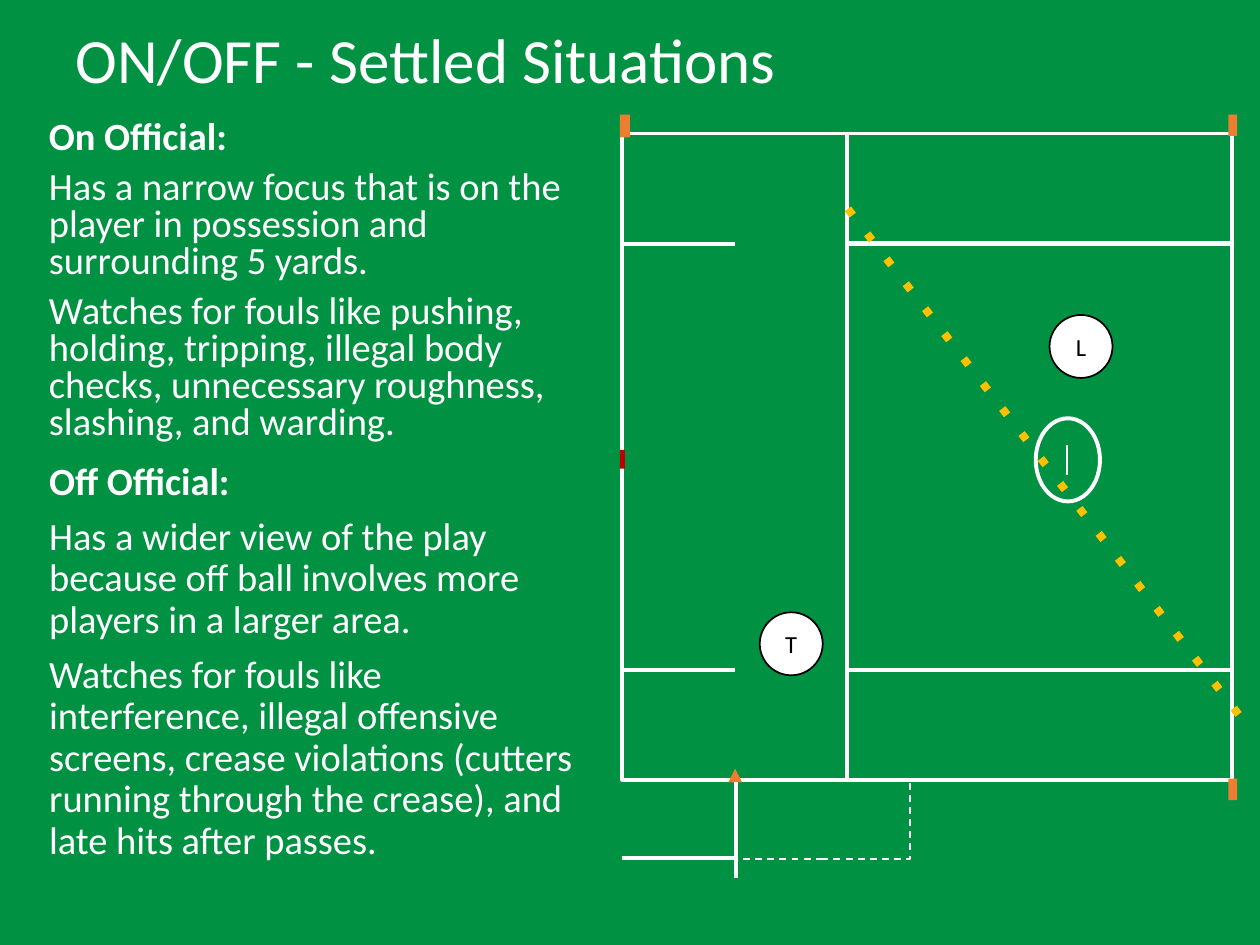
from collections import namedtuple

from lxml.etree import SubElement
from pptx import Presentation
from pptx.dml.color import RGBColor
from pptx.enum.shapes import MSO_CONNECTOR, MSO_SHAPE
from pptx.enum.text import MSO_ANCHOR, MSO_AUTO_SIZE, PP_ALIGN
from pptx.oxml.ns import qn
from pptx.util import Inches, Pt

GREEN = RGBColor(0x00, 0x92, 0x42)
WHITE = RGBColor(0xFF, 0xFF, 0xFF)
BLACK = RGBColor(0x00, 0x00, 0x00)
ORANGE = RGBColor(0xED, 0x7D, 0x31)
RED = RGBColor(0xC0, 0x00, 0x00)
AMBER = RGBColor(0xFF, 0xC0, 0x00)

CELL = Inches(0.01)
COLUMNS, ROWS = 1000, 750
Box = namedtuple("Box", "left top width height")

TITLE_BOX = Box(50, 25, 733, 50)
ON_BOX = Box(29, 91, 442, 289)
OFF_BOX = Box(29, 362, 442, 317)
FIELD_BOX = Box(494, 106, 484, 513)

ON_TEXT = [
    "On Official:",
    "Has a narrow focus that is on the player in possession and surrounding 5 yards.",
    "Watches for fouls like pushing, holding, tripping, illegal body checks, "
    "unnecessary roughness, slashing, and warding.",
]
OFF_TEXT = [
    "Off Official:",
    "Has a wider view of the play because off ball involves more players in a larger area.",
    "Watches for fouls like interference, illegal offensive screens, crease violations "
    "(cutters running through the crease), and late hits after passes.",
]


def apply(target, values):
    """Set every attribute named in a dict of format values."""
    for name, value in values.items():
        setattr(target, name, value)


def place(item, box):
    """Move and size an item to a box given in grid cells."""
    apply(item, {name: value * CELL for name, value in box._asdict().items()})


def write(para, text, size, color, bold=False):
    """Add one formatted span of text to a paragraph."""
    span = para.add_run()
    span.text = text
    apply(span.font, {"name": "Calibri", "size": Pt(size), "bold": bold})
    span.font.color.rgb = color


def stroke(item, color, weight, dash=None):
    """Colour an outline or line and set its weight and dash."""
    item.line.color.rgb = color
    item.line.width = Pt(weight)
    if dash:
        outline = item._element.spPr.find(qn("a:ln"))
        SubElement(outline, qn("a:prstDash"), val=dash)


def add_figure(page, field, kind, part, fill=None, line=None):
    """Add a preset shape at a part of the field."""
    figure = page.shapes.add_shape(kind, 0, 0, 0, 0)
    place(figure, Box(field.left + part[0], field.top + part[1], *part[2:]))
    figure.shadow.inherit = False
    if fill is None:
        figure.fill.background()
    else:
        figure.fill.solid()
        figure.fill.fore_color.rgb = fill
    if line is None:
        figure.line.fill.background()
    else:
        stroke(figure, *line)
    return figure


def add_line(page, field, ends, line):
    """Add a straight line between two points of the field."""
    origin = (field.left, field.top) * 2
    points = [(start + offset) * CELL for start, offset in zip(origin, ends)]
    connector = page.shapes.add_connector(MSO_CONNECTOR.STRAIGHT, *points)
    stroke(connector, *line)
    SubElement(connector._element.spPr, qn("a:effectLst"))


def add_official(page, field, left, top, letter):
    """Add a lettered disc that marks an official."""
    disc = add_figure(page, field, MSO_SHAPE.OVAL, (left, top, 50, 50), WHITE, (BLACK, 1))
    disc.text_frame.vertical_anchor = MSO_ANCHOR.MIDDLE
    para = disc.text_frame.paragraphs[0]
    para.alignment = PP_ALIGN.CENTER
    write(para, letter, 14, BLACK)


def draw_field(page, field):
    """Draw the half field with its markings, cones and goal."""
    chalk = (WHITE, 2.25)
    midline, wing, sideline = 178, 88, 89
    attack = field.width - midline
    low_wing = field.height - wing + 1
    rectangles = [
        (0, 0, midline, field.height),
        (midline, 0, attack, wing - 1),
        (midline, low_wing, attack, wing - 1),
        (midline, wing, attack, low_wing - wing),
    ]
    for part in rectangles:
        add_figure(page, field, MSO_SHAPE.RECTANGLE, part, line=chalk)
    add_figure(page, field, MSO_SHAPE.RECTANGLE, (90, 514, 138, 62), line=(WHITE, 1, "dash"))
    for part in [(481, -15, 7, 17), (481, 512, 7, 17), (-2, -15, 8, 18)]:
        add_figure(page, field, MSO_SHAPE.RECTANGLE, part, ORANGE)
    add_figure(page, field, MSO_SHAPE.RECTANGLE, (-2, 251, 4, 15), RED)
    add_figure(page, field, MSO_SHAPE.ISOSCELES_TRIANGLE, (84, 504, 11, 11), ORANGE)
    add_figure(page, field, MSO_SHAPE.OVAL, (328, 226, 51, 66), line=chalk)
    add_line(page, field, (353, 271, 353, 247), (WHITE, 1.5))
    add_line(page, field, (90, 591, 90, 515), chalk)
    for row in (wing, low_wing, 575):
        add_line(page, field, (0, row, sideline, row), chalk)


def draw_coverage(page, field):
    """Mark both officials and the line that divides their areas."""
    add_official(page, field, 109, 380, "T")
    add_line(page, field, (489, 461, 173, 52), (AMBER, 4.5, "dot"))
    add_official(page, field, 339, 144, "L")


def fill_title(title, box, text):
    """Place the title and write its text."""
    place(title, box)
    frame = title.text_frame
    apply(frame, {"vertical_anchor": MSO_ANCHOR.MIDDLE, "auto_size": MSO_AUTO_SIZE.NONE})
    para = frame.paragraphs[0]
    apply(para, {"alignment": PP_ALIGN.LEFT, "line_spacing": 0.9})
    write(para, text, 36, WHITE)


def fill_duties(holder, box, lines, spacing):
    """Write a bold heading and the duties below it, without bullets."""
    place(holder, box)
    frame = holder.text_frame
    apply(frame, {"word_wrap": True, "auto_size": MSO_AUTO_SIZE.NONE})
    for index, text in enumerate(lines):
        para = frame.add_paragraph() if index else frame.paragraphs[0]
        properties = para._p.get_or_add_pPr()
        properties.set("marL", "0")
        properties.set("indent", "0")
        SubElement(properties, qn("a:buNone"))
        apply(para, {"line_spacing": spacing, "space_before": Pt(7.5 if index else 0)})
        write(para, text, 22, WHITE, bold=index == 0)


def main():
    """Build and save the deck."""
    deck = Presentation()
    apply(deck, {"slide_width": COLUMNS * CELL, "slide_height": ROWS * CELL})
    page = deck.slides.add_slide(deck.slide_layouts[1])
    page.background.fill.solid()
    page.background.fill.fore_color.rgb = GREEN
    draw_field(page, FIELD_BOX)
    fill_title(page.shapes.title, TITLE_BOX, "ON/OFF - Settled Situations")
    draw_coverage(page, FIELD_BOX)
    fill_duties(page.placeholders[1], OFF_BOX, OFF_TEXT, 0.9)
    fill_duties(page.shapes.add_textbox(0, 0, 0, 0), ON_BOX, ON_TEXT, 0.8)
    deck.save("out.pptx")


if __name__ == "__main__":
    main()
